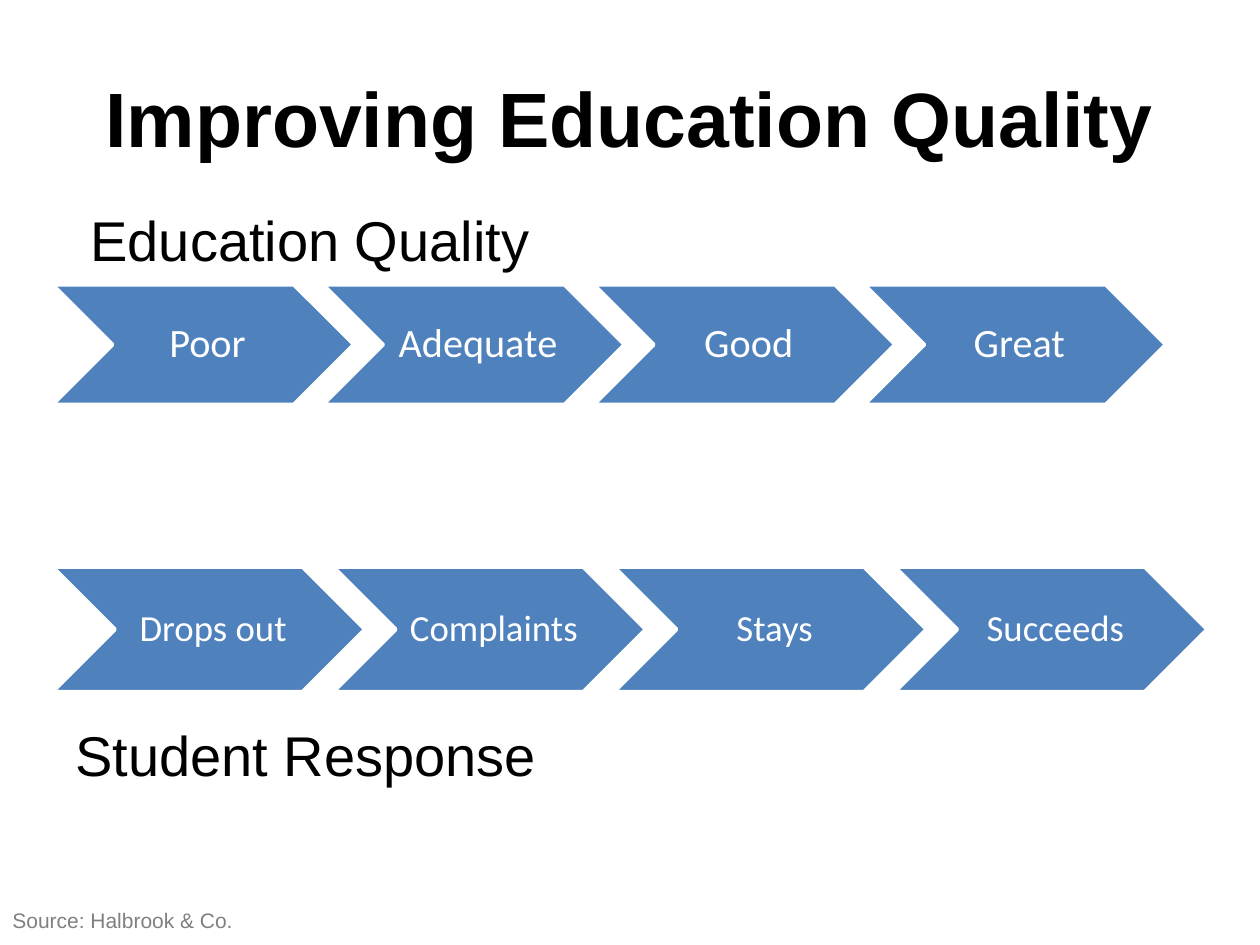
import pptx
import pptx.util
import pptx.dml.color
import pptx.enum.shapes
import pptx.enum.text

Inches = pptx.util.Inches
Pt = pptx.util.Pt

COLORS = {"text": "000000", "source": "808080", "chevron": "4F81BD", "white": "FFFFFF"}


def rgb(name):
    """Return the named palette colour."""
    return pptx.dml.color.RGBColor.from_string(COLORS[name])


def format_font(paragraph, name, size, color, bold=False):
    """Set the font of a whole paragraph."""
    paragraph.font.name = name
    paragraph.font.size = Pt(size)
    paragraph.font.bold = bold
    paragraph.font.color.rgb = rgb(color)


def place_title(slide, text, left, top, width, height):
    """Fill and place the title placeholder."""
    title = slide.shapes.title
    title.left, title.top = Inches(left), Inches(top)
    title.width, title.height = Inches(width), Inches(height)
    title.text_frame.text = text
    title.text_frame.vertical_anchor = pptx.enum.text.MSO_ANCHOR.MIDDLE
    paragraph = title.text_frame.paragraphs[0]
    paragraph.alignment = pptx.enum.text.PP_ALIGN.CENTER
    format_font(paragraph, "Arial", 44, "text", bold=True)


def add_label(slide, text, left, top, width, height, size=32, color="text"):
    """Add a left-aligned text box that grows with its text."""
    label = slide.shapes.add_textbox(Inches(left), Inches(top), Inches(width), Inches(height))
    frame = label.text_frame
    frame.text = text
    frame.word_wrap = True
    frame.auto_size = pptx.enum.text.MSO_AUTO_SIZE.SHAPE_TO_FIT_TEXT
    format_font(frame.paragraphs[0], "Arial", size, color)


def add_chevron_row(slide, stages, left, top, width, height, size):
    """Add a group of equal chevrons, each overlapping the next by a tenth, across the box."""
    chevron_width = width / (1 + 0.9 * (len(stages) - 1))
    group = slide.shapes.add_group_shape()
    for index, stage in enumerate(stages):
        chevron = group.shapes.add_shape(
            pptx.enum.shapes.MSO_SHAPE.CHEVRON,
            Inches(left + index * 0.9 * chevron_width), Inches(top),
            Inches(chevron_width), Inches(height))
        chevron.shadow.inherit = False
        chevron.fill.solid()
        chevron.fill.fore_color.rgb = rgb("chevron")
        chevron.line.color.rgb = rgb("white")
        chevron.line.width = Pt(2)
        frame = chevron.text_frame
        frame.text = stage
        frame.word_wrap = True
        frame.vertical_anchor = pptx.enum.text.MSO_ANCHOR.MIDDLE
        frame.margin_left = Inches(0.1)
        frame.margin_top = frame.margin_right = frame.margin_bottom = Inches(0.03)
        paragraph = frame.paragraphs[0]
        paragraph.alignment = pptx.enum.text.PP_ALIGN.CENTER
        paragraph.line_spacing = 0.9
        format_font(paragraph, "Calibri", size, "white")


def main():
    """Build and save the presentation."""
    presentation = pptx.Presentation()
    presentation.slide_width, presentation.slide_height = Inches(10), Inches(7.5)
    slide = presentation.slides.add_slide(presentation.slide_layouts[5])
    place_title(slide, "Improving Education Quality", 0.5, 0.3, 9, 1.25)
    add_chevron_row(slide, ["Poor", "Adequate", "Good", "Great"], 0.42, 2.26, 8.83, 0.95, 23)
    add_chevron_row(slide, ["Drops out", "Complaints", "Stays", "Succeeds"],
                    0.42, 4.5, 9.16, 0.99, 21)
    add_label(slide, "Education Quality", 0.62, 1.58, 4.71, 0.64)
    add_label(slide, "Student Response", 0.5, 5.67, 4.25, 0.64)
    add_label(slide, "Source: Halbrook & Co.", 0, 7.15, 2.75, 0.3, 12, "source")
    presentation.save("out.pptx")


if __name__ == "__main__":
    main()
